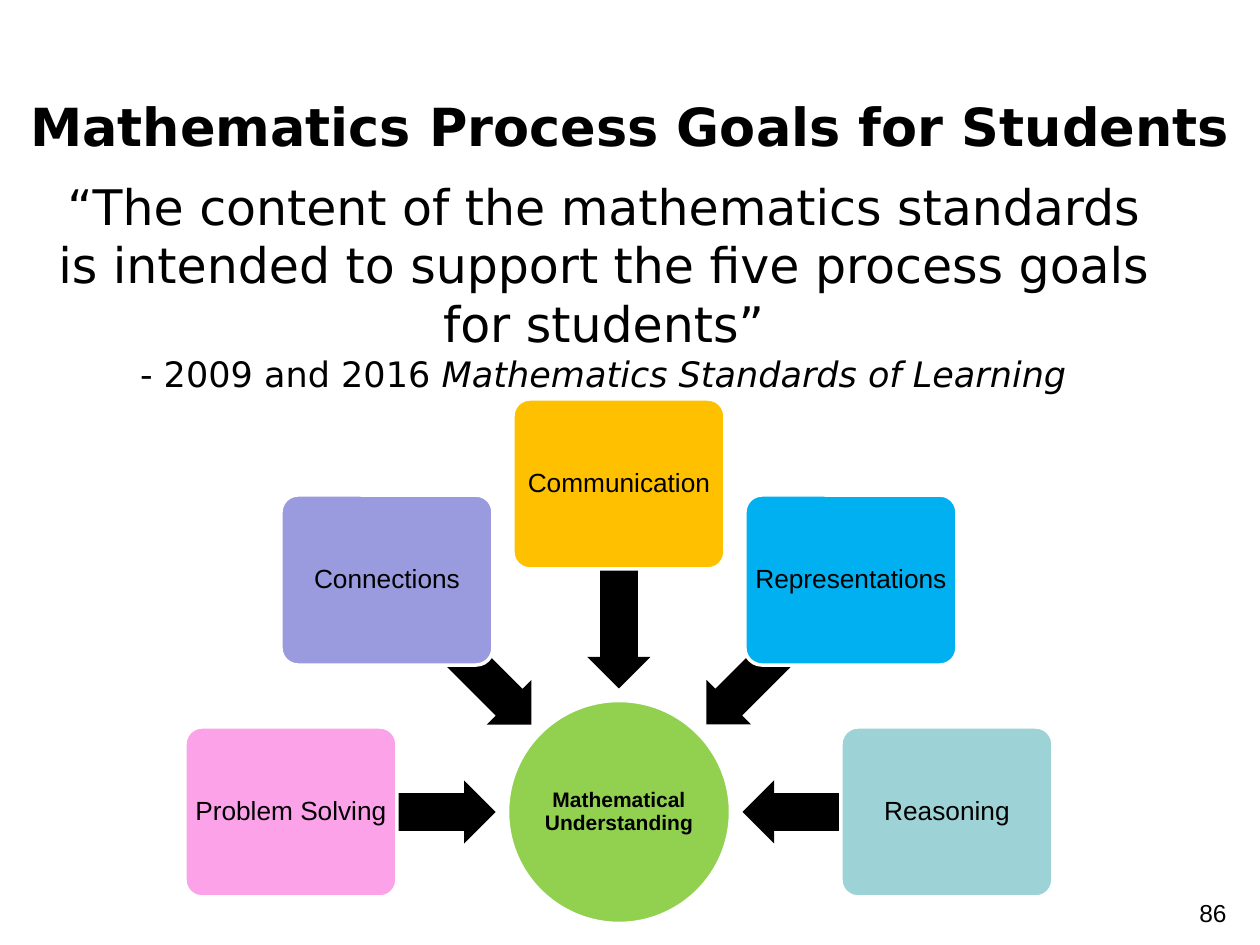
from math import cos, radians, sin

from pptx import Presentation
from pptx.dml.color import RGBColor
from pptx.enum.shapes import MSO_SHAPE
from pptx.enum.text import MSO_ANCHOR, PP_ALIGN
from pptx.util import Emu, Pt

PX_PER_INCH = 126
HUB_X, HUB_Y, HUB_SIZE = 619, 812, 223
GOAL_RADIUS, GOAL_WIDTH, GOAL_HEIGHT = 328, 212, 170
ARROW_RADIUS, ARROW_LENGTH, ARROW_THICKNESS = 226, 205, 63
GOALS = [
    ("Problem Solving", "FCA2E9", 180),
    ("Connections", "9A9ADF", 225),
    ("Communication", "FFC000", 270),
    ("Representations", "00B0F0", 315),
    ("Reasoning", "9DD2D6", 0),
]


def px(length):
    return Emu(round(length * 914400 / PX_PER_INCH))


def color(hex_value):
    return RGBColor.from_string(hex_value)


def around_hub(angle, radius):
    turn = radians(angle)
    return round(HUB_X + radius * cos(turn)), round(HUB_Y + radius * sin(turn))


class GoalSlide:
    heading_font = "DejaVu Sans"
    diagram_font = "Arial"
    ink = "000000"
    outline = "FFFFFF"

    def __init__(self, presentation):
        self.slide = presentation.slides.add_slide(presentation.slide_layouts[6])

    def format_run(self, run, font, size, bold=False, italic=False):
        run.font.name = font
        run.font.size = Pt(size)
        run.font.bold = bold
        run.font.italic = italic
        run.font.color.rgb = color(self.ink)

    def text(self, left, top, width, height, lines, font,
             align=PP_ALIGN.CENTER, anchor=MSO_ANCHOR.TOP):
        box = self.slide.shapes.add_textbox(px(left), px(top), px(width), px(height))
        frame = box.text_frame
        frame.word_wrap = True
        frame.vertical_anchor = anchor
        paragraph = frame.paragraphs[0]
        paragraph.alignment = align
        for number, line in enumerate(lines):
            if number:
                paragraph.add_line_break()
            for wording, size, bold, italic in line:
                run = paragraph.add_run()
                run.text = wording
                self.format_run(run, font, size, bold, italic)

    def shape(self, kind, center, width, height, fill):
        x, y = center
        shape = self.slide.shapes.add_shape(
            kind, px(x - width / 2), px(y - height / 2), px(width), px(height))
        shape.shadow.inherit = False
        shape.fill.solid()
        shape.fill.fore_color.rgb = color(fill)
        return shape

    def node(self, kind, center, width, height, fill, label, size, inset, bold=False):
        node = self.shape(kind, center, width, height, fill)
        node.line.color.rgb = color(self.outline)
        node.line.width = Pt(2)
        frame = node.text_frame
        frame.text = label
        frame.word_wrap = True
        frame.vertical_anchor = MSO_ANCHOR.MIDDLE
        frame.margin_left = frame.margin_right = px(inset)
        frame.margin_top = frame.margin_bottom = px(inset)
        paragraph = frame.paragraphs[0]
        paragraph.alignment = PP_ALIGN.CENTER
        paragraph.line_spacing = 0.9
        self.format_run(paragraph.runs[0], self.diagram_font, size, bold)
        return node

    def hub(self, label):
        self.node(MSO_SHAPE.OVAL, (HUB_X, HUB_Y), HUB_SIZE, HUB_SIZE,
                  "92D050", label, 12, 1, bold=True)

    def arrow(self, angle):
        arrow = self.shape(MSO_SHAPE.LEFT_ARROW, around_hub(angle, ARROW_RADIUS),
                           ARROW_LENGTH, ARROW_THICKNESS, self.ink)
        arrow.line.fill.background()
        arrow.adjustments[0] = 0.6
        arrow.adjustments[1] = 0.5
        arrow.rotation = angle

    def goal(self, label, fill, angle):
        goal = self.node(MSO_SHAPE.ROUNDED_RECTANGLE, around_hub(angle, GOAL_RADIUS),
                         GOAL_WIDTH, GOAL_HEIGHT, fill, label, 15, 4)
        goal.adjustments[0] = 0.1


def main():
    presentation = Presentation()
    presentation.slide_width = px(1260)
    presentation.slide_height = px(945)
    page = GoalSlide(presentation)

    page.text(0, 63, 1260, 126,
              [[("Mathematics Process Goals for Students", 30, True, False)]],
              page.heading_font, anchor=MSO_ANCHOR.MIDDLE)
    page.hub("Mathematical Understanding")
    for label, fill, angle in GOALS:
        page.arrow(angle)
        page.goal(label, fill, angle)
    page.text(35, 170, 1137, 189, [
        [("“The content of the mathematics standards is intended to support "
          "the five process goals for students”", 28, False, False)],
        [("- 2009 and 2016 ", 20, False, False),
         ("Mathematics Standards of Learning", 20, False, True)],
    ], page.heading_font)
    page.text(945, 892, 294, 66, [[("86", 14, False, False)]],
              page.diagram_font, align=PP_ALIGN.RIGHT)

    presentation.save("out.pptx")


if __name__ == "__main__":
    main()
